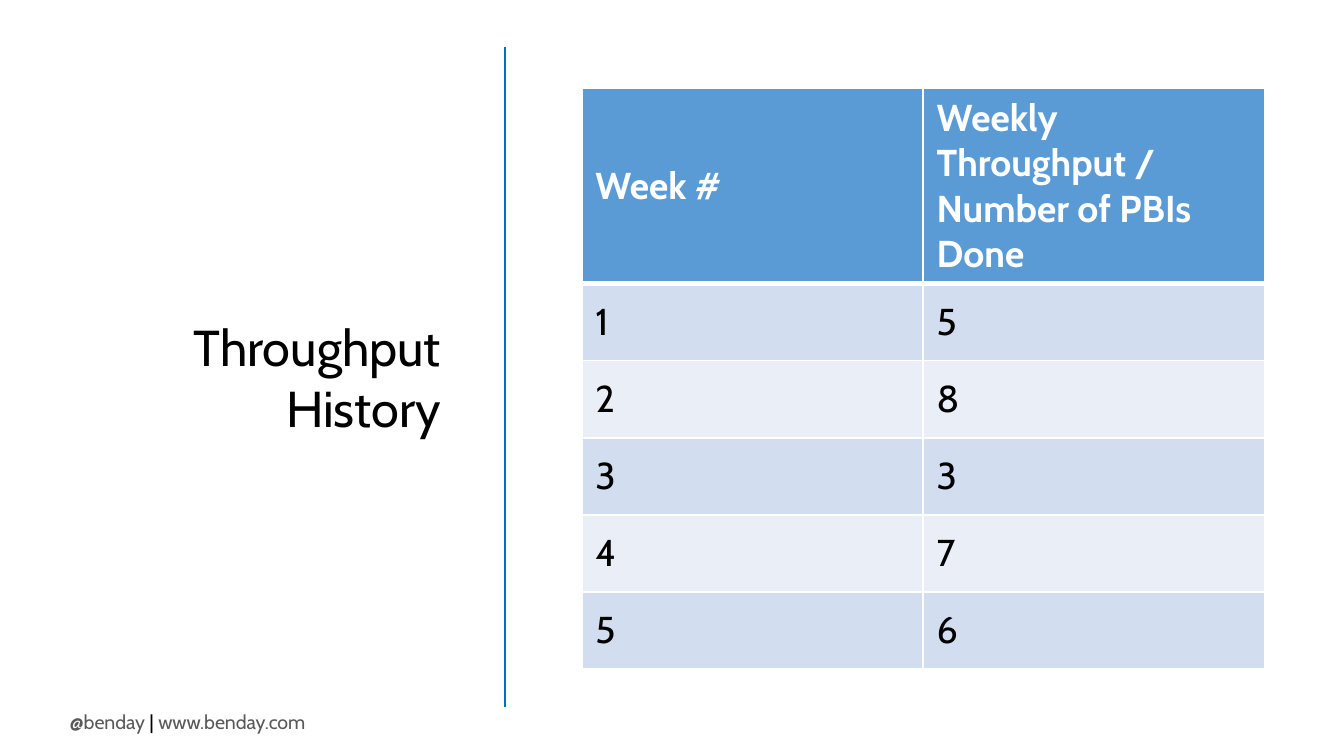
from dataclasses import dataclass

from lxml import etree
from pptx import Presentation
from pptx.dml.color import RGBColor
from pptx.enum.shapes import MSO_CONNECTOR
from pptx.enum.text import MSO_ANCHOR, MSO_AUTO_SIZE, PP_ALIGN
from pptx.oxml.ns import qn
from pptx.util import Inches, Pt

STRAIGHT = MSO_CONNECTOR.STRAIGHT
MIDDLE = MSO_ANCHOR.MIDDLE
RIGHT = PP_ALIGN.RIGHT
NO_AUTOFIT = MSO_AUTO_SIZE.NONE
TITLE_ONLY = 5


@dataclass(frozen=True)
class Theme:
    font: str = "Cabin"
    text: RGBColor = RGBColor.from_string("000000")
    muted: RGBColor = RGBColor.from_string("595959")
    white: RGBColor = RGBColor.from_string("FFFFFF")
    divider: RGBColor = RGBColor.from_string("0072BC")
    header: RGBColor = RGBColor.from_string("5B9BD5")
    odd_row: RGBColor = RGBColor.from_string("D2DEEF")
    even_row: RGBColor = RGBColor.from_string("EAEFF7")
    title_size: Pt = Pt(27)
    table_size: Pt = Pt(20)
    footer_size: Pt = Pt(10.5)


THEME = Theme()


def style_font(font, size, color, bold=False):
    font.name = THEME.font
    font.size = size
    font.color.rgb = color
    font.bold = bold


def set_borders(cell, top, bottom):
    """Draw white cell borders; top and bottom are widths in points."""
    properties = cell._tc.get_or_add_tcPr()
    widths = {"a:lnL": 1, "a:lnR": 1, "a:lnT": top, "a:lnB": bottom}
    for position, (side, width) in enumerate(widths.items()):
        line = etree.Element(qn(side), w=str(Pt(width)))
        fill = etree.SubElement(line, qn("a:solidFill"))
        etree.SubElement(fill, qn("a:srgbClr"), val=str(THEME.white))
        properties.insert(position, line)


prs = Presentation()
prs.slide_width = Inches(10)
prs.slide_height = prs.slide_width * 9 // 16
slide = prs.slides.add_slide(prs.slide_layouts[TITLE_ONLY])

# Footer
footer = slide.shapes.add_textbox(Inches(0.42), Inches(5.23), Inches(2.08), Inches(0.28))
footer.text_frame.word_wrap = False
contact = footer.text_frame.paragraphs[0]
for part, color in (("@benday", THEME.muted), (" | ", THEME.text), ("www.benday.com", THEME.muted)):
    run = contact.add_run()
    run.text = part
    style_font(run.font, THEME.footer_size, color)

# Divider
divider = slide.shapes.add_connector(STRAIGHT, Inches(3.76), Inches(0.35), Inches(3.76), Inches(5.26))
divider.line.color.rgb = THEME.divider
divider.line.width = Pt(1)
etree.SubElement(divider._element.spPr, qn("a:effectLst"))

# Title
title = slide.shapes.title
title.left, title.top = Inches(0.29), Inches(1.31)
title.width, title.height = Inches(3.09), Inches(2.99)
title.text_frame.text = "Throughput History"
title.text_frame.word_wrap = True
title.text_frame.auto_size = NO_AUTOFIT
title.text_frame.vertical_anchor = MIDDLE
heading = title.text_frame.paragraphs[0]
heading.alignment = RIGHT
style_font(heading.font, THEME.title_size, THEME.text)

# Throughput table
weekly_done = [5, 8, 3, 7, 6]
rows = [("Week #", "Weekly Throughput / Number of PBIs Done")]
rows += [(str(week), str(done)) for week, done in enumerate(weekly_done, start=1)]
header_height, weeks_height = Inches(1.45), Inches(2.87)
throughput = slide.shapes.add_table(
    len(rows), 2, Inches(4.33), Inches(0.66), Inches(5.08), header_height + weeks_height
).table

for r, values in enumerate(rows):
    is_header = r == 0
    throughput.rows[r].height = header_height if is_header else weeks_height // len(weekly_done)
    if is_header:
        fill_color = THEME.header
    else:
        fill_color = THEME.odd_row if r % 2 else THEME.even_row
    for c, value in enumerate(values):
        cell = throughput.cell(r, c)
        cell.text = value
        cell.vertical_anchor = MIDDLE
        cell.fill.solid()
        cell.fill.fore_color.rgb = fill_color
        set_borders(cell, top=3 if r == 1 else 1, bottom=3 if is_header else 1)
        style_font(cell.text_frame.paragraphs[0].font, THEME.table_size,
                   THEME.white if is_header else THEME.text, bold=is_header)

prs.save("out.pptx")
